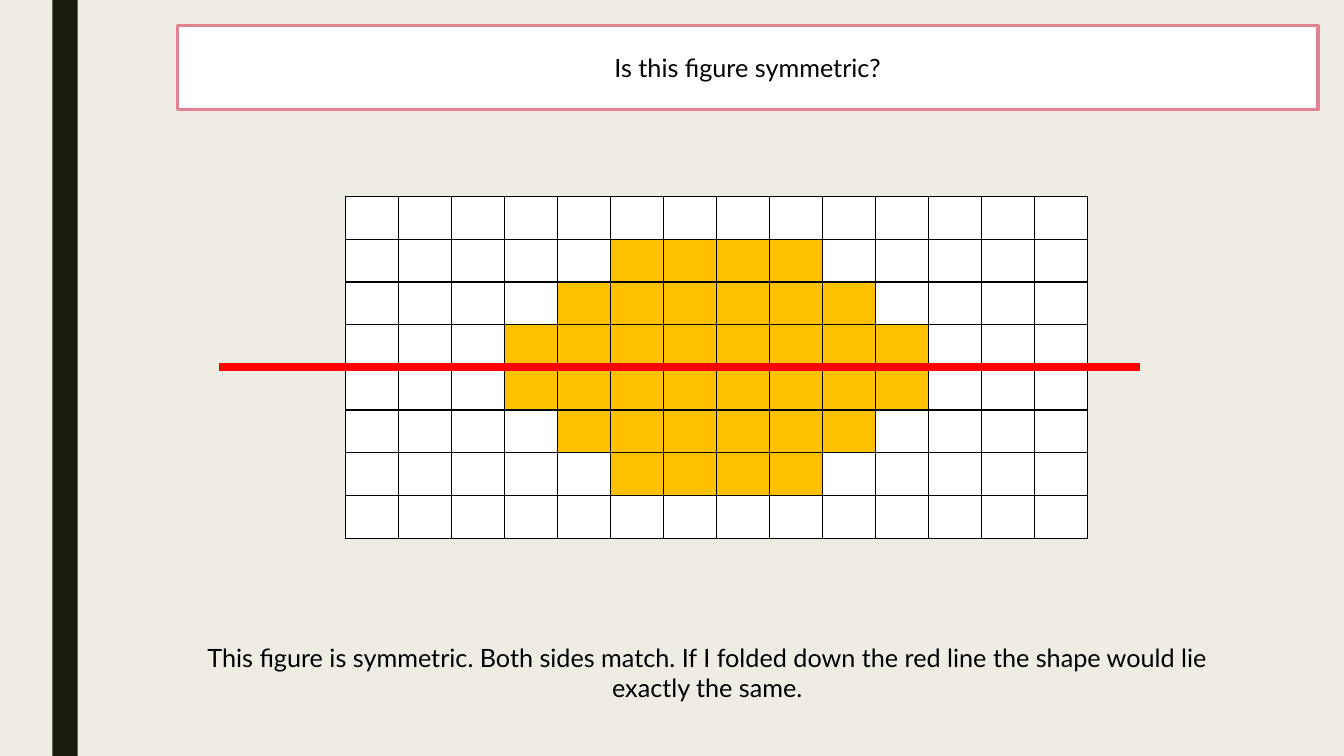
"""Build a slide asking whether a figure on a grid is symmetric."""
from lxml import etree
from pptx import Presentation
from pptx.dml.color import RGBColor
from pptx.enum.shapes import MSO_CONNECTOR, MSO_SHAPE
from pptx.enum.text import MSO_ANCHOR, MSO_AUTO_SIZE, PP_ALIGN
from pptx.oxml import parse_xml
from pptx.oxml.ns import nsdecls, qn
from pptx.util import Inches, Pt

RECT = MSO_SHAPE.RECTANGLE
STRAIGHT = MSO_CONNECTOR.STRAIGHT
TOP, MIDDLE = MSO_ANCHOR.TOP, MSO_ANCHOR.MIDDLE
FIT = MSO_AUTO_SIZE.SHAPE_TO_FIT_TEXT
CENTER = PP_ALIGN.CENTER

CREAM = RGBColor(0xEF, 0xED, 0xE3)
DARK = RGBColor(0x19, 0x1B, 0x0E)
PINK = RGBColor(0xE2, 0x83, 0x94)
GOLD = RGBColor(0xFF, 0xC0, 0x00)
RED = RGBColor(0xFF, 0x00, 0x00)
WHITE = RGBColor(0xFF, 0xFF, 0xFF)
BLACK = RGBColor(0x00, 0x00, 0x00)

COLS = 14
GOLD_WIDTHS = [0, 4, 6, 8, 8, 6, 4, 0]
GRID_WIDTH, GRID_HEIGHT = 7.36, 3.39


def write(sp, text, size=18, font="Lato", color=BLACK, anchor=TOP):
    tf = sp.text_frame
    tf.word_wrap = True
    tf.auto_size = FIT
    tf.vertical_anchor = anchor
    p = tf.paragraphs[0]
    p.alignment = CENTER
    r = p.add_run()
    r.text = text
    r.font.size = Pt(size)
    r.font.name = font
    r.font.color.rgb = color


prs = Presentation()
prs.slide_width, prs.slide_height = Inches(13.33), Inches(7.5)
s = prs.slides.add_slide(prs.slide_layouts[5])
s.background.fill.solid()
s.background.fill.fore_color.rgb = CREAM

title = s.shapes.title
title.left, title.top = Inches(1.76), Inches(0.47)
title.width, title.height = Inches(11.31), Inches(0.4)
title.fill.solid()
title.fill.fore_color.rgb = WHITE
title.line.color.rgb = PINK
title.line.width = Pt(2.75)
write(title, "Is this figure symmetric?", anchor=MIDDLE)

sidebar = s.shapes.add_shape(RECT, Inches(0.52), 0, Inches(0.25), Inches(7.5))
sidebar.shadow.inherit = False
sidebar.fill.solid()
sidebar.fill.fore_color.rgb = DARK
sidebar.line.fill.background()

rows = len(GOLD_WIDTHS)
grid = s.shapes.add_table(rows, COLS, Inches(3.43), Inches(1.95),
                          Inches(GRID_WIDTH), Inches(GRID_HEIGHT)).table
grid.first_row = grid.horz_banding = False
for column in grid.columns:
    column.width = Inches(GRID_WIDTH / COLS)
for row, gold_width in zip(grid.rows, GOLD_WIDTHS):
    row.height = Inches(GRID_HEIGHT / rows)
    first = (COLS - gold_width) // 2
    for c, cell in enumerate(row.cells):
        tc_pr = cell._tc.get_or_add_tcPr()
        for side in ("lnL", "lnR", "lnT", "lnB"):
            tc_pr.append(parse_xml(
                f'<a:{side} {nsdecls("a")} w="12700"><a:solidFill>'
                f'<a:srgbClr val="{BLACK}"/></a:solidFill></a:{side}>'))
        cell.fill.solid()
        cell.fill.fore_color.rgb = GOLD if first <= c < first + gold_width else WHITE

fold = s.shapes.add_connector(STRAIGHT, Inches(11.31), Inches(3.64),
                              Inches(2.17), Inches(3.64))
fold.line.color.rgb = RED
fold.line.width = Pt(6)
etree.SubElement(fold._element.spPr, qn("a:effectLst"))

answer = s.shapes.add_textbox(Inches(1.86), Inches(6.32), Inches(10.31), Inches(0.71))
write(answer, "This figure is symmetric. Both sides match. If I folded down "
              "the red line the shape would lie exactly the same.")

prs.save("out.pptx")
